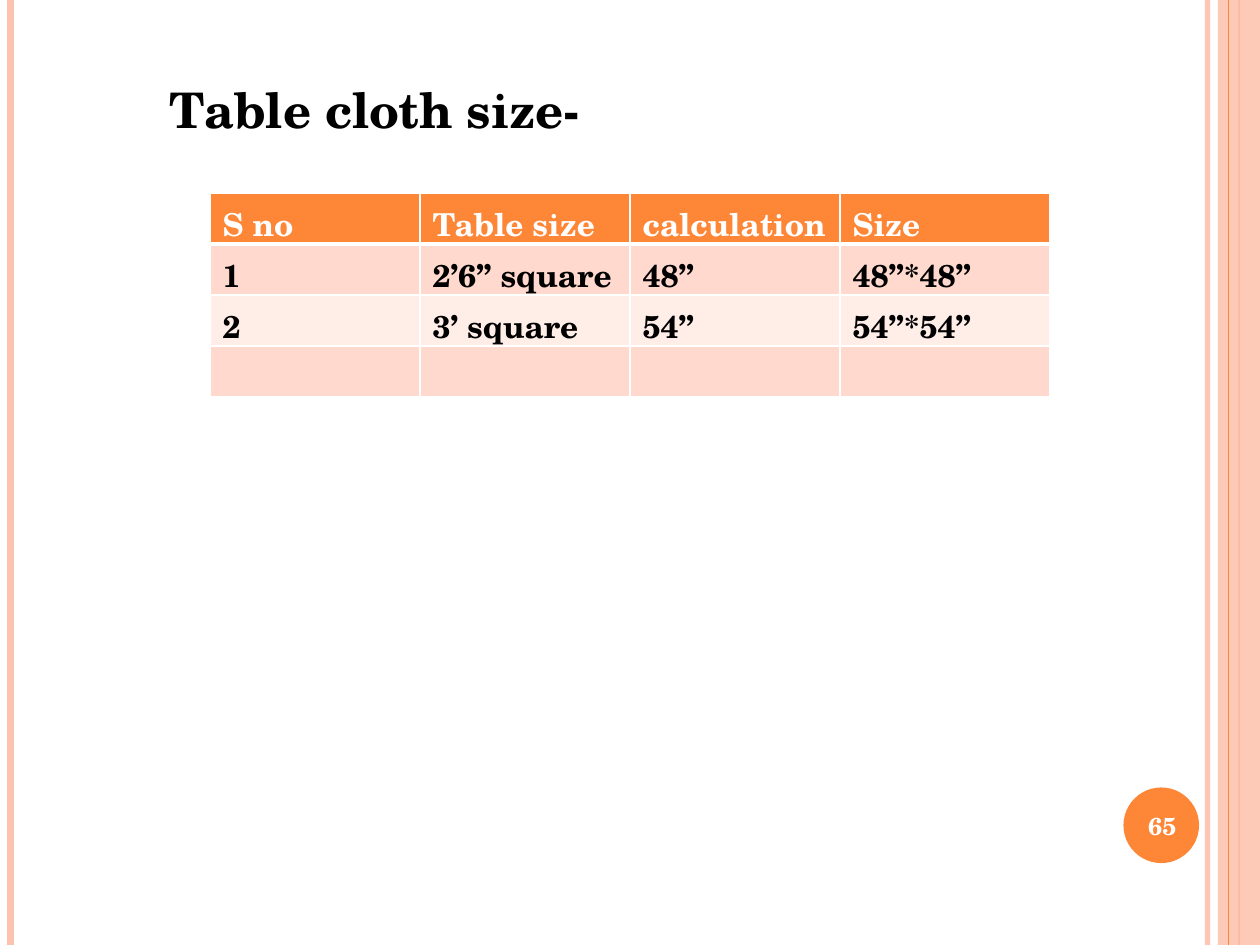
import lxml.etree
import pptx
import pptx.dml.color
import pptx.enum.shapes
import pptx.enum.text
import pptx.oxml.ns
import pptx.util

ORANGE, PEACH, WHITE, BLACK = "FE8637", "FEC3AE", "FFFFFF", "000000"
BANDS = ["FFD9CE", "FFEDE8"]
COLUMNS, ROWS = 120, 90
SIZES = [
    ["S no", "Table size", "calculation", "Size"],
    ["1", "2’6’’ square", "48’’", "48’’*48’’"],
    ["2", "3’ square", "54’’", "54’’*54’’"],
    ["", "", "", ""],
]


def color(hex_code):
    return pptx.dml.color.RGBColor.from_string(hex_code)


def child(parent, tag, **attributes):
    return lxml.etree.SubElement(parent, pptx.oxml.ns.qn(tag), attributes)


class SlideBuilder:
    """Draws styled elements on a slide measured in grid columns and rows."""

    def __init__(self, deck, font):
        self.slide = deck.slides.add_slide(deck.slide_layouts[6])
        self.shapes = self.slide.shapes
        self.column = deck.slide_width / COLUMNS
        self.row = deck.slide_height / ROWS
        self.font = font

    def box(self, left, top, width, height):
        return (round(left * self.column), round(top * self.row),
                round(width * self.column), round(height * self.row))

    def fade(self, element, opacity):
        if opacity < 100:
            for rgb in element.iter(pptx.oxml.ns.qn("a:srgbClr")):
                child(rgb, "a:alpha", val=str(opacity * 1000))

    def stripe(self, column, hex_code, points, opacity=100):
        left, top, _, bottom = self.box(column, 0, 0, ROWS)
        line = self.shapes.add_connector(
            pptx.enum.shapes.MSO_CONNECTOR.STRAIGHT, left, top, left, bottom)
        line.line.color.rgb = color(hex_code)
        line.line.width = pptx.util.Pt(points)
        properties = line._element.spPr
        self.fade(properties, opacity)
        child(properties, "a:effectLst")

    def shape(self, kind, place, hex_code, opacity=100):
        shape = self.shapes.add_shape(kind, *self.box(*place))
        shape.shadow.inherit = False
        shape.fill.solid()
        shape.fill.fore_color.rgb = color(hex_code)
        shape.line.fill.background()
        self.fade(shape._element.spPr, opacity)

    def add_words(self, frame, words, size, hex_code, align=None):
        paragraph = frame.paragraphs[0]
        paragraph.alignment = align
        run = paragraph.add_run()
        run.text = words
        run.font.name = self.font
        run.font.size = pptx.util.Pt(size)
        run.font.bold = True
        run.font.color.rgb = color(hex_code)

    def text(self, place, words, size, hex_code, align=None, anchor=None):
        frame = self.shapes.add_textbox(*self.box(*place)).text_frame
        frame.word_wrap = True
        frame.vertical_anchor = anchor
        self.add_words(frame, words, size, hex_code, align)

    def borders(self, cell, **widths):
        properties = cell._tc.get_or_add_tcPr()
        for side in "LRTB":
            width = pptx.util.Pt(widths.get(side, 1))
            line = child(properties, f"a:ln{side}", w=str(width))
            child(child(line, "a:solidFill"), "a:srgbClr", val=WHITE)

    def table(self, place, records, size):
        left, top, width, height = self.box(*place)
        table = self.shapes.add_table(
            len(records), len(records[0]), left, top, width, height).table
        for number, record in enumerate(records):
            table.rows[number].height = height // len(records)
            for position, words in enumerate(record):
                cell = table.cell(number, position)
                self.borders(cell, **{0: {"B": 3}, 1: {"T": 3}}.get(number, {}))
                cell.fill.solid()
                band = BANDS[(number - 1) % 2] if number else ORANGE
                cell.fill.fore_color.rgb = color(band)
                if words:
                    self.add_words(cell.text_frame, words, size,
                                   BLACK if number else WHITE)


def main():
    deck = pptx.Presentation()
    deck.slide_width = pptx.util.Inches(10)
    deck.slide_height = pptx.util.Inches(7.5)
    page = SlideBuilder(deck, "TeX Gyre Schola")
    kinds = pptx.enum.shapes.MSO_SHAPE

    page.stripe(115, PEACH, 3, 93)
    page.stripe(1, PEACH, 4.5)
    page.stripe(118, ORANGE, 1.5)
    page.shape(kinds.RECTANGLE, (116, 0, 4, ROWS), PEACH, 87)
    page.stripe(117, ORANGE, 0.75)
    page.shape(kinds.OVAL, (107, 75, 7.2, 7.2), ORANGE)
    page.text((106.7, 75.2, 8, 6.8), "65", 14, WHITE,
              pptx.enum.text.PP_ALIGN.CENTER, pptx.enum.text.MSO_ANCHOR.MIDDLE)
    page.table((20, 18.4, 80, 19.4), SIZES, 18)
    page.text((15, 7, 89, 6.8), "Table cloth size-", 28, BLACK)
    deck.save("out.pptx")


if __name__ == "__main__":
    main()
